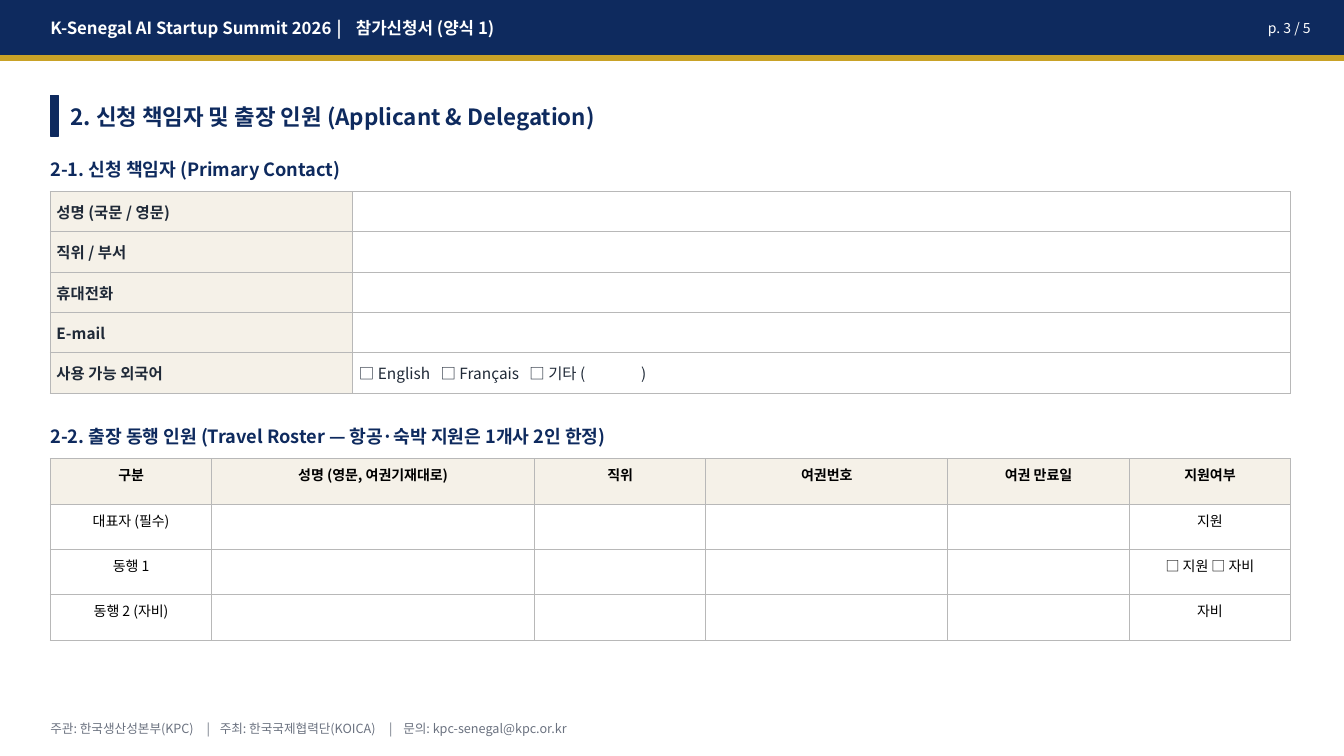
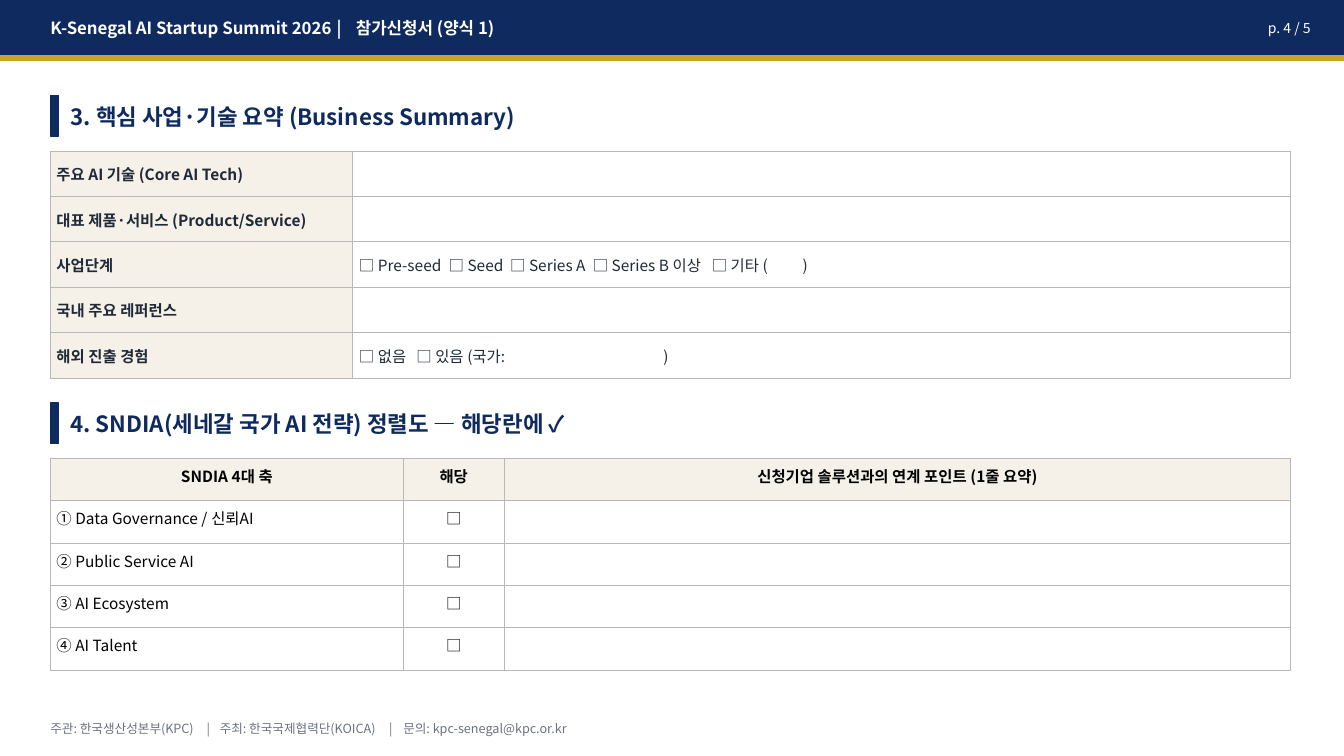
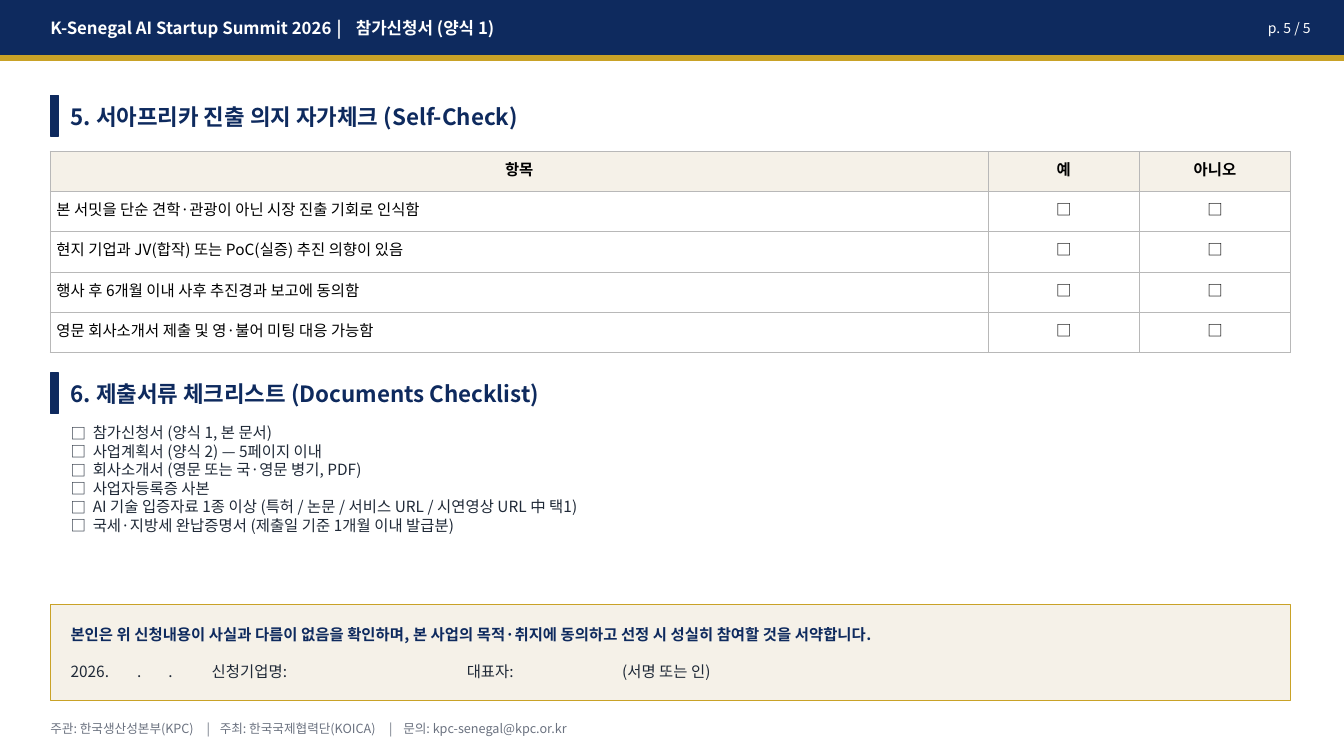
from lxml import etree
from pptx import Presentation
from pptx.dml.color import RGBColor
from pptx.enum.shapes import MSO_SHAPE
from pptx.enum.text import MSO_ANCHOR, MSO_AUTO_SIZE, PP_ALIGN
from pptx.oxml.ns import qn
from pptx.util import Inches, Pt

RECTANGLE = MSO_SHAPE.RECTANGLE
TOP, MIDDLE = MSO_ANCHOR.TOP, MSO_ANCHOR.MIDDLE
LEFT, CENTER, RIGHT = PP_ALIGN.LEFT, PP_ALIGN.CENTER, PP_ALIGN.RIGHT
NO_AUTOFIT = MSO_AUTO_SIZE.NONE

FONT = "Noto Sans CJK KR"
COLORS = {
    "navy": "0E2A5E", "gold": "C9A227", "cream": "F5F1E8", "white": "FFFFFF",
    "ink": "1F2937", "black": "000000", "gray": "6B7280", "border": "B8B8B8",
}
SLIDE_WIDTH, SLIDE_HEIGHT = 13.33, 7.5
MARGIN, TEXT_LEFT, CONTENT_WIDTH = 0.5, 0.7, 12.3
CELL_INSET = 0.06
TITLE_ONLY, TITLE_AND_BODY = 5, 1
PAGE_COUNT = 5

HEADER = "K-Senegal AI Startup Summit 2026\t|\t참가신청서 (양식 1)"
HEADER_TABS = [2.84, 3.03]
FOOTER = "주관: 한국생산성본부(KPC)\t|\t주최: 한국국제협력단(KOICA)\t|\t문의: kpc-senegal@kpc.or.kr"
FOOTER_TABS = [1.55, 1.68, 3.36, 3.5]

CONTACT_FORM = [
    ("성명 (국문 / 영문)", "", []),
    ("직위 / 부서", "", []),
    ("휴대전화", "", []),
    ("E-mail", "", []),
    ("사용 가능 외국어", "□ English\t□ Français\t□ 기타 (\t)", [0.81, 1.69, 2.8]),
]
BUSINESS_FORM = [
    ("주요 AI 기술 (Core AI Tech)", "", []),
    ("대표 제품·서비스 (Product/Service)", "", []),
    ("사업단계", "□ Pre-seed\t□ Seed\t□ Series A\t□ Series B 이상\t□ 기타 (\t)",
     [0.89, 1.5, 2.32, 3.5, 4.4]),
    ("국내 주요 레퍼런스", "", []),
    ("해외 진출 경험", "□ 없음\t□ 있음 (국가:\t)", [0.57, 3.02]),
]
ROSTER = [
    ["구분", "성명 (영문, 여권기재대로)", "직위", "여권번호", "여권 만료일", "지원여부"],
    ["대표자 (필수)", "", "", "", "", "지원"],
    ["동행 1", "", "", "", "", "□ 지원 □ 자비"],
    ["동행 2 (자비)", "", "", "", "", "자비"],
]
PILLARS = ["① Data Governance / 신뢰AI", "② Public Service AI", "③ AI Ecosystem", "④ AI Talent"]
ALIGNMENT_GRID = [["SNDIA 4대 축", "해당", "신청기업 솔루션과의 연계 포인트 (1줄 요약)"]]
ALIGNMENT_GRID += [[pillar, "□", ""] for pillar in PILLARS]
STATEMENTS = [
    "본 서밋을 단순 견학·관광이 아닌 시장 진출 기회로 인식함",
    "현지 기업과 JV(합작) 또는 PoC(실증) 추진 의향이 있음",
    "행사 후 6개월 이내 사후 추진경과 보고에 동의함",
    "영문 회사소개서 제출 및 영·불어 미팅 대응 가능함",
]
SELF_CHECK = [["항목", "예", "아니오"]]
SELF_CHECK += [[statement, "□", "□"] for statement in STATEMENTS]
DOCUMENTS = [
    "참가신청서 (양식 1, 본 문서)",
    "사업계획서 (양식 2) — 5페이지 이내",
    "회사소개서 (영문 또는 국·영문 병기, PDF)",
    "사업자등록증 사본",
    "AI 기술 입증자료 1종 이상 (특허 / 논문 / 서비스 URL / 시연영상 URL 中 택1)",
    "국세·지방세 완납증명서 (제출일 기준 1개월 이내 발급분)",
]
PLEDGE = "본인은 위 신청내용이 사실과 다름이 없음을 확인하며, 본 사업의 목적·취지에 동의하고 선정 시 성실히 참여할 것을 서약합니다."
SIGNATURE = "2026.\t.\t.\t신청기업명:\t대표자:\t(서명 또는 인)"
SIGNATURE_TABS = [0.66, 0.97, 1.4, 3.93, 5.47]


def rgb(name):
    return RGBColor.from_string(COLORS[name])


def write(para, text, size, color, bold=False, align=LEFT, tabs=(), bullet=None):
    para.text = text
    properties = para._p.get_or_add_pPr()
    if bullet:
        hang = Inches(0.22)
        properties.set("marL", str(hang))
        properties.set("indent", str(-hang))
        etree.SubElement(properties, qn("a:buFont"), typeface=FONT)
        etree.SubElement(properties, qn("a:buChar"), char=bullet)
    if tabs:
        tab_list = etree.SubElement(properties, qn("a:tabLst"))
        for stop in tabs:
            etree.SubElement(tab_list, qn("a:tab"), pos=str(Inches(stop)), algn="l")
    para.alignment = align
    para.space_before = Pt(0)
    para.font.size = Pt(size)
    para.font.bold = bold
    para.font.color.rgb = rgb(color)
    para.font.name = FONT
    etree.SubElement(properties.find(qn("a:defRPr")), qn("a:ea"), typeface=FONT)
    if not text:
        etree.SubElement(para._p, qn("a:endParaRPr"), sz=str(size * 100))


def set_frame(box, left, top, width, height, anchor=MIDDLE):
    box.left, box.top = Inches(left), Inches(top)
    box.width, box.height = Inches(width), Inches(height)
    frame = box.text_frame
    frame.word_wrap = True
    frame.auto_size = NO_AUTOFIT
    frame.vertical_anchor = anchor
    frame.margin_left = frame.margin_right = frame.margin_top = frame.margin_bottom = 0
    return frame


def add_text(page, place, text, size, color, **style):
    box = page.shapes.add_textbox(0, 0, 0, 0)
    frame = set_frame(box, *place)
    write(frame.paragraphs[0], text, size, color, **style)
    return frame


def add_rectangle(page, place, fill, line):
    shape = page.shapes.add_shape(RECTANGLE, *[Inches(value) for value in place])
    shape.shadow.inherit = False
    shape.fill.solid()
    shape.fill.fore_color.rgb = rgb(fill)
    shape.line.color.rgb = rgb(line)
    shape.line.width = Pt(1)


def add_section(page, top, text, title=None):
    add_rectangle(page, (MARGIN, top, 0.08, 0.4), "navy", "navy")
    place = (TEXT_LEFT, top - 0.02, 12, 0.45)
    if title is None:
        add_text(page, place, text, 16, "navy", bold=True)
    else:
        write(set_frame(title, *place).paragraphs[0], text, 16, "navy", bold=True)


def add_subheading(page, top, text):
    add_text(page, (MARGIN, top, 12, 0.35), text, 13, "navy", bold=True)


def add_page(deck, number, title, layout=TITLE_ONLY):
    page = deck.slides.add_slide(deck.slide_layouts[layout])
    add_rectangle(page, (0, 0, SLIDE_WIDTH, 0.55), "navy", "navy")
    add_text(page, (MARGIN, 0, 9, 0.55), HEADER, 12, "white", bold=True, tabs=HEADER_TABS)
    add_text(page, (11.8, 0, 1.2, 0.55), f"p. {number} / {PAGE_COUNT}", 10, "white", align=RIGHT)
    add_rectangle(page, (0, 0.55, SLIDE_WIDTH, 0.05), "gold", "gold")
    add_text(page, (MARGIN, 7.05, CONTENT_WIDTH, 0.35), FOOTER, 9, "gray", tabs=FOOTER_TABS)
    add_section(page, 0.95, title, page.shapes.title)
    return page


def fill_cell(cell, text, size, color, shaded, anchor, **style):
    cell.margin_left = cell.margin_right = Inches(CELL_INSET)
    cell.margin_top = cell.margin_bottom = Inches(CELL_INSET)
    cell.vertical_anchor = anchor
    if shaded:
        cell.fill.solid()
        cell.fill.fore_color.rgb = rgb("cream")
    else:
        cell.fill.background()
    properties = cell._tc.get_or_add_tcPr()
    for index, side in enumerate(("a:lnL", "a:lnR", "a:lnT", "a:lnB")):
        border = etree.Element(qn(side), w=str(Pt(0.75)))
        solid = etree.SubElement(border, qn("a:solidFill"))
        etree.SubElement(solid, qn("a:srgbClr"), val=COLORS["border"])
        properties.insert(index, border)
    write(cell.text_frame.paragraphs[0], text, size, color, bold=shaded, **style)


def add_table(page, top, row_count, widths, row_height):
    table = page.shapes.add_table(
        row_count, len(widths), Inches(MARGIN), Inches(top),
        Inches(CONTENT_WIDTH), Inches(row_height * row_count)).table
    table.first_row = table.horz_banding = False
    for column, width in zip(table.columns, widths):
        column.width = Inches(width)
    for row in table.rows:
        row.height = Inches(row_height)
    return table


def add_form(page, top, entries, row_height):
    table = add_table(page, top, len(entries), [3, 9.3], row_height)
    for row, (label, answer, tabs) in enumerate(entries):
        fill_cell(table.cell(row, 0), label, 11, "ink", True, MIDDLE)
        fill_cell(table.cell(row, 1), answer, 11, "ink", False, MIDDLE, tabs=tabs)


def add_grid(page, top, rows, widths, row_height, size=11, first_align=LEFT):
    table = add_table(page, top, len(rows), widths, row_height)
    for row, texts in enumerate(rows):
        for column, text in enumerate(texts):
            align = CENTER if row == 0 or column else first_align
            fill_cell(table.cell(row, column), text, size, "black", row == 0, TOP, align=align)


def build_delegation(deck):
    page = add_page(deck, 3, "2. 신청 책임자 및 출장 인원 (Applicant & Delegation)")
    add_subheading(page, 1.5, "2-1. 신청 책임자 (Primary Contact)")
    add_form(page, 1.9, CONTACT_FORM, 0.4)
    add_subheading(page, 4.15, "2-2. 출장 동행 인원 (Travel Roster — 항공·숙박 지원은 1개사 2인 한정)")
    add_grid(page, 4.55, ROSTER, [1.6, 3.2, 1.7, 2.4, 1.8, 1.6], 0.45, 10, CENTER)


def build_business(deck):
    page = add_page(deck, 4, "3. 핵심 사업·기술 요약 (Business Summary)")
    add_form(page, 1.5, BUSINESS_FORM, 0.45)
    add_section(page, 4, "4. SNDIA(세네갈 국가 AI 전략) 정렬도 — 해당란에 ✓")
    add_grid(page, 4.55, ALIGNMENT_GRID, [3.5, 1, 7.8], 0.42)


def build_checklist(deck):
    page = add_page(deck, 5, "5. 서아프리카 진출 의지 자가체크 (Self-Check)", TITLE_AND_BODY)
    add_grid(page, 1.5, SELF_CHECK, [9.3, 1.5, 1.5], 0.4)
    add_section(page, 3.7, "6. 제출서류 체크리스트 (Documents Checklist)")
    frame = set_frame(page.placeholders[1], TEXT_LEFT, 4.2, 12, 1.7, TOP)
    for index, document in enumerate(DOCUMENTS):
        para = frame.add_paragraph() if index else frame.paragraphs[0]
        write(para, document, 11, "ink", bullet="□")
    add_rectangle(page, (MARGIN, 6, CONTENT_WIDTH, 0.95), "cream", "gold")
    frame = add_text(page, (TEXT_LEFT, 6.05, 11.9, 0.85), PLEDGE, 11, "navy", bold=True)
    signature = frame.add_paragraph()
    write(signature, SIGNATURE, 11, "ink", tabs=SIGNATURE_TABS)
    signature.space_before = Pt(13.2)


def main():
    deck = Presentation()
    deck.slide_width, deck.slide_height = Inches(SLIDE_WIDTH), Inches(SLIDE_HEIGHT)
    build_delegation(deck)
    build_business(deck)
    build_checklist(deck)
    deck.save("out.pptx")


if __name__ == "__main__":
    main()
